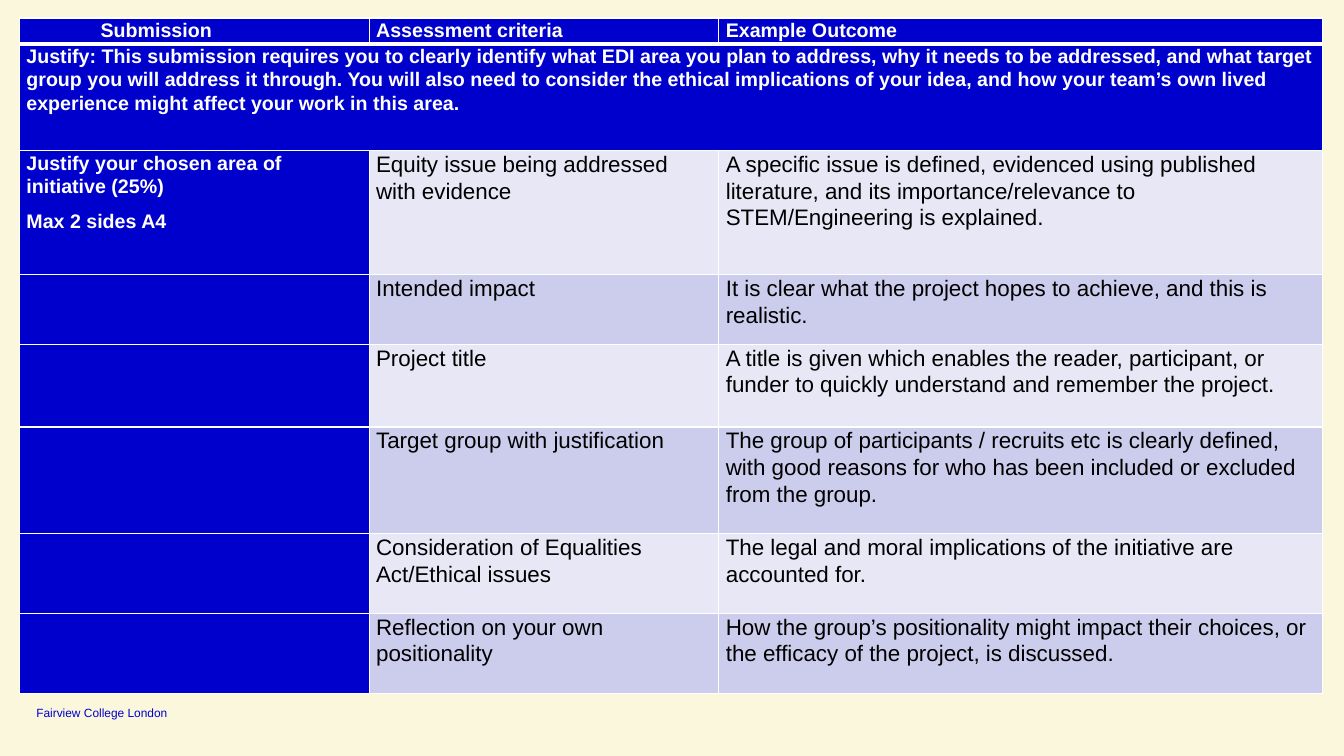
from dataclasses import dataclass

from lxml import etree
from pptx import Presentation
from pptx.dml.color import RGBColor
from pptx.enum import text
from pptx.oxml import ns
from pptx.util import Pt

HEADINGS = ("\tSubmission", "Assessment criteria", "Example Outcome")
SUMMARY = (
    "Justify: This submission requires you to clearly identify what EDI area you plan to address, "
    "why it needs to be addressed, and what target group you will address it through. You will also "
    "need to consider the ethical implications of your idea, and how your team’s own lived "
    "experience might affect your work in this area."
)
SUBMISSION = "Justify your chosen area of initiative (25%)\nMax 2 sides A4"
CRITERIA = [
    ("Equity issue being addressed with evidence",
     "A specific issue is defined, evidenced using published literature, and its "
     "importance/relevance to STEM/Engineering is explained."),
    ("Intended impact",
     "It is clear what the project hopes to achieve, and this is realistic."),
    ("Project title",
     "A title is given which enables the reader, participant, or funder to quickly understand "
     "and remember the project."),
    ("Target group with justification",
     "The group of participants / recruits etc is clearly defined, with good reasons for who "
     "has been included or excluded from the group."),
    ("Consideration of Equalities Act/Ethical issues",
     "The legal and moral implications of the initiative are accounted for."),
    ("Reflection on your own positionality",
     "How the group’s positionality might impact their choices, or the efficacy of the "
     "project, is discussed."),
]
FOOTER = "Fairview College London"

COLUMN_WIDTHS = (249.8, 249.8, 431.3)
ROW_HEIGHTS = (18.7, 76.3, 88.6, 49.7, 59, 76.3, 56.9, 56.9)
TABLE_LEFT, TABLE_TOP = 13.9, 12.8
HEADING_TAB = 53


@dataclass(frozen=True)
class Theme:
    font: str = "Arial"
    background: str = "FBF7DC"
    blue: str = "0000CD"
    white: str = "FFFFFF"
    black: str = "000000"
    bands: tuple = ("E7E7F6", "CCCCED")
    heading_size: float = 14
    body_size: float = 16
    footer_size: float = 8.5


THEME = Theme()


def style_paragraph(p, size, color, bold=False):
    p.font.name = THEME.font
    p.font.size = Pt(size)
    p.font.bold = bold
    p.font.color.rgb = RGBColor.from_string(color)


def add_borders(cell, top=1, bottom=1):
    tc_pr = cell._tc.get_or_add_tcPr()
    for side, width in (("L", 1), ("R", 1), ("T", top), ("B", bottom)):
        line = etree.SubElement(tc_pr, ns.qn(f"a:ln{side}"), w=str(Pt(width)))
        fill = etree.SubElement(line, ns.qn("a:solidFill"))
        etree.SubElement(fill, ns.qn("a:srgbClr"), val=THEME.white)


def add_tab_stop(p, position):
    tabs = etree.SubElement(p._p.get_or_add_pPr(), ns.qn("a:tabLst"))
    etree.SubElement(tabs, ns.qn("a:tab"), pos=str(Pt(position)), algn="l")


def fill_cell(cell, words, row, column):
    is_body = row > 1 and column > 0
    add_borders(cell, top=3 if row == 1 else 1, bottom=3 if row == 0 else 1)
    cell.fill.solid()
    color = THEME.bands[row % 2] if is_body else THEME.blue
    cell.fill.fore_color.rgb = RGBColor.from_string(color)
    cell.margin_left = cell.margin_right = Pt(5)
    cell.margin_top = cell.margin_bottom = 0
    tf = cell.text_frame
    tf.text = words
    for p in tf.paragraphs:
        p.line_spacing = 1.07
        p.space_after = Pt(8)
        if "\t" in words:
            add_tab_stop(p, HEADING_TAB)
        if is_body:
            style_paragraph(p, THEME.body_size, THEME.black)
        else:
            style_paragraph(p, THEME.heading_size, THEME.white, bold=True)


def add_criteria_table(s):
    rows = [HEADINGS, (SUMMARY, "", "")]
    rows += [("" if i else SUBMISSION, *pair) for i, pair in enumerate(CRITERIA)]
    table = s.shapes.add_table(
        len(rows), len(HEADINGS), Pt(TABLE_LEFT), Pt(TABLE_TOP),
        Pt(sum(COLUMN_WIDTHS)), Pt(sum(ROW_HEIGHTS)),
    ).table
    for column, width in zip(table.columns, COLUMN_WIDTHS):
        column.width = Pt(width)
    for row, height in zip(table.rows, ROW_HEIGHTS):
        row.height = Pt(height)
    for r, row in enumerate(rows):
        for c, words in enumerate(row):
            fill_cell(table.cell(r, c), words, r, c)
    table.cell(1, 0).merge(table.cell(1, len(HEADINGS) - 1))


def add_footer(s):
    tf = s.shapes.add_textbox(Pt(25.9), Pt(503.3), Pt(111.6), Pt(10.8)).text_frame
    tf.word_wrap = True
    tf.margin_left = tf.margin_right = tf.margin_top = tf.margin_bottom = 0
    tf.vertical_anchor = text.MSO_ANCHOR.BOTTOM
    tf.text = FOOTER
    style_paragraph(tf.paragraphs[0], THEME.footer_size, THEME.blue)


def main():
    prs = Presentation()
    prs.slide_width, prs.slide_height = Pt(960), Pt(540)
    s = prs.slides.add_slide(prs.slide_layouts[6])
    s.background.fill.solid()
    s.background.fill.fore_color.rgb = RGBColor.from_string(THEME.background)
    add_footer(s)
    add_criteria_table(s)
    prs.save("out.pptx")


if __name__ == "__main__":
    main()
